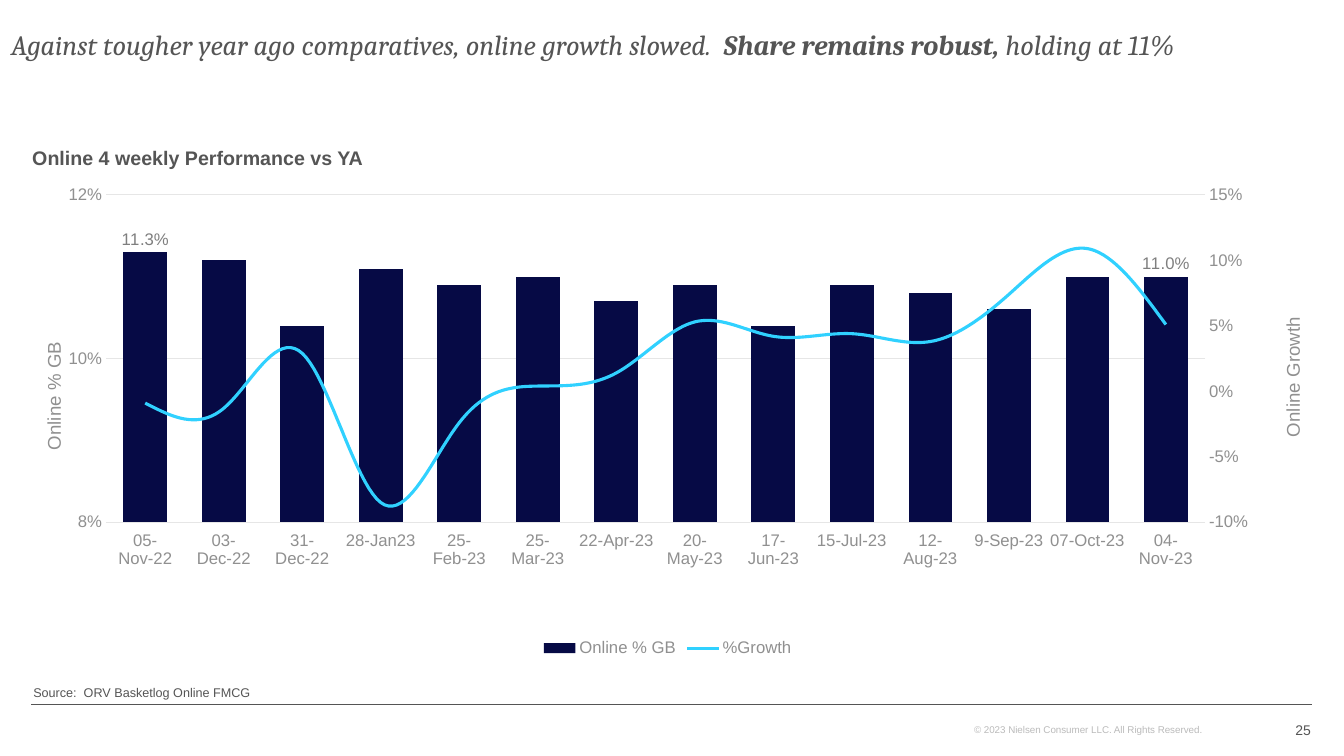
from copy import deepcopy

from lxml import etree
from pptx import Presentation
from pptx import util as u
from pptx.chart.axis import ValueAxis
from pptx.chart.data import CategoryChartData
from pptx.dml.color import RGBColor
from pptx.enum import chart as charts, shapes, text
from pptx.oxml.ns import qn

# Content
TITLE = [
    ("Against tougher year ago comparatives, online growth slowed.  ", False),
    ("Share remains robust, ", True),
    ("holding at 11%", False),
]
HEADING = "Online 4 weekly Performance vs YA"
SOURCE = "Source:  ORV Basketlog Online FMCG"
COPYRIGHT = "© 2023 Nielsen Consumer LLC. All Rights Reserved."
PAGE = "25"
SHARE_NAME, GROWTH_NAME = "Online % GB", "%Growth"
PERIODS = [  # four weeks ending, online share, growth on year ago
    ("05-Nov-22", 0.113, -0.009), ("03-Dec-22", 0.112, -0.013),
    ("31-Dec-22", 0.104, 0.029), ("28-Jan23", 0.111, -0.085),
    ("25-Feb-23", 0.109, -0.024), ("25-Mar-23", 0.110, 0.004),
    ("22-Apr-23", 0.107, 0.014), ("20-May-23", 0.109, 0.053),
    ("17-Jun-23", 0.104, 0.042), ("15-Jul-23", 0.109, 0.044),
    ("12-Aug-23", 0.108, 0.038), ("9-Sep-23", 0.106, 0.074),
    ("07-Oct-23", 0.110, 0.109), ("04-Nov-23", 0.110, 0.051),
]
SHARE_SCALE = dict(minimum_scale=0.08, maximum_scale=0.12, major_unit=0.02)
GROWTH_SCALE = dict(minimum_scale=-0.1, maximum_scale=0.15, major_unit=0.05)

THEME = {
    "body": "Arial", "display": "Cambria",
    "ink": "555555", "axis": "909090", "label": "7F7F7F", "grid": "E6E6E6",
    "faint": "BBBBBB", "bar": "060A45", "line": "30D1FF",
    "title": 20, "heading": 14, "axis_title": 13.3, "chart": 12,
    "page": 10, "source": 9, "copyright": 7,
}

# Places as percentages of the slide: left, top, width, height
SLIDE = (13.33, 7.5)
PLACES = {
    "title": (0.83, 2.93, 98.8, 5.73),
    "heading": (2.4, 18.53, 35.86, 4.53),
    "chart": (2.4, 24.53, 95.05, 62.93),
    "source": (2.48, 90, 95.05, 6.4),
    "rule": (2.33, 93.2, 95.27, 0),
    "copyright": (72.47, 95.07, 21.31, 2.93),
    "page": (90.1, 93.87, 7.43, 5.33),
}
# Shares of the chart frame
PLOT_AREA = dict(x=0.058, y=0.02, w=0.865, h=0.688)
SHARE_TITLE_AT = dict(x=0.005, y=0.32)
GROWTH_TITLE_AT = dict(x=0.98, y=0.268)


def place(name):
    return [u.Inches(share * SLIDE[i % 2] / 100)
            for i, share in enumerate(PLACES[name])]


def apply(target, **values):
    for name, value in values.items():
        setattr(target, name, value)


def style_font(font, size, color, face="body", **values):
    apply(font, name=THEME[face], size=u.Pt(THEME[size]), **values)
    font.color.rgb = RGBColor.from_string(THEME[color])


def style_line(line, color, width):
    line.color.rgb = RGBColor.from_string(THEME[color])
    line.width = u.Pt(width)


def fill_text(shape, runs, size, color, face="body", middle=True,
              align=text.PP_ALIGN.LEFT, italic=False):
    frame = shape.text_frame
    anchor = text.MSO_ANCHOR.MIDDLE if middle else text.MSO_ANCHOR.TOP
    apply(frame, word_wrap=True, vertical_anchor=anchor,
          auto_size=text.MSO_AUTO_SIZE.NONE, margin_left=0, margin_right=0,
          margin_top=u.Inches(0.05), margin_bottom=u.Inches(0.05))
    paragraph = frame.paragraphs[0]
    paragraph.alignment = align
    for words, bold in runs:
        run = paragraph.add_run()
        run.text = words
        style_font(run.font, size, color, face, bold=bold, italic=italic)


def child(parent, tag, value):
    etree.SubElement(parent, qn(tag)).set("val", str(value))


def set_layout(parent, index, box, inner=False):
    for old in parent.findall(qn("c:layout")):
        parent.remove(old)
    layout = etree.Element(qn("c:layout"))
    manual = etree.SubElement(layout, qn("c:manualLayout"))
    if inner:
        child(manual, "c:layoutTarget", "inner")
    for side in "xy":
        child(manual, f"c:{side}Mode", "edge")
    for side, share in box.items():
        child(manual, f"c:{side}", share)
    parent.insert(index, layout)


def style_value_axis(axis, scale, title, title_at):
    apply(axis, major_tick_mark=charts.XL_TICK_MARK.NONE, **scale)
    apply(axis.tick_labels, number_format="0%", number_format_is_linked=False)
    style_font(axis.tick_labels.font, "chart", "axis")
    axis.format.line.fill.background()
    frame = axis.axis_title.text_frame
    frame.text = title
    style_font(frame.paragraphs[0].runs[0].font, "axis_title", "axis", bold=False)
    title_element = axis._element.find(qn("c:title"))
    body = title_element.find(".//" + qn("a:bodyPr"))
    body.set("rot", "-5400000")
    body.set("vert", "horz")
    set_layout(title_element, 1, title_at)


def move_growth_to_right_axis(chart):
    plot_area = chart._chartSpace.chart.plotArea
    bars = plot_area.find(qn("c:barChart"))
    growth = bars.findall(qn("c:ser"))[1]
    for invert in growth.findall(qn("c:invertIfNegative")):
        growth.remove(invert)
    lines = etree.Element(qn("c:lineChart"))
    bars.addnext(lines)
    child(lines, "c:grouping", "standard")
    child(lines, "c:varyColors", 0)
    lines.append(growth)
    child(lines, "c:marker", 1)
    new_ids = {"c:catAx": "5001", "c:valAx": "5002"}
    right = {}
    last = plot_area.find(qn("c:valAx"))
    for tag, cross in (("c:catAx", "c:valAx"), ("c:valAx", "c:catAx")):
        axis = right[tag] = deepcopy(plot_area.find(qn(tag)))
        axis.find(qn("c:axId")).set("val", new_ids[tag])
        axis.find(qn("c:crossAx")).set("val", new_ids[cross])
        child(lines, "c:axId", new_ids[tag])
        last.addnext(axis)
        last = axis
    right["c:catAx"].find(qn("c:delete")).set("val", "1")
    right["c:valAx"].find(qn("c:axPos")).set("val", "r")
    right["c:valAx"].find(qn("c:crosses")).set("val", "max")
    axis = ValueAxis(right["c:valAx"])
    axis.has_major_gridlines = False
    style_value_axis(axis, GROWTH_SCALE, "Online Growth", GROWTH_TITLE_AT)
    set_layout(plot_area, 0, PLOT_AREA, inner=True)


def add_performance_chart(slide):
    names, shares, growth = zip(*PERIODS)
    data = CategoryChartData(number_format="0.0%")
    data.categories = names
    data.add_series(SHARE_NAME, shares)
    data.add_series(GROWTH_NAME, growth)
    chart = slide.shapes.add_chart(
        charts.XL_CHART_TYPE.COLUMN_CLUSTERED, *place("chart"), data).chart
    apply(chart, has_title=False, has_legend=True)
    style_font(chart.font, "chart", "axis")
    apply(chart.legend, position=charts.XL_LEGEND_POSITION.BOTTOM,
          include_in_layout=False)
    style_font(chart.legend.font, "chart", "axis")

    # Axes
    dates = chart.category_axis
    apply(dates, major_tick_mark=charts.XL_TICK_MARK.NONE,
          tick_label_position=charts.XL_TICK_LABEL_POSITION.LOW)
    style_font(dates.tick_labels.font, "chart", "axis")
    style_line(dates.format.line, "grid", 0.75)
    style_value_axis(chart.value_axis, SHARE_SCALE, SHARE_NAME, SHARE_TITLE_AT)
    style_line(chart.value_axis.major_gridlines.format.line, "grid", 0.75)
    move_growth_to_right_axis(chart)

    # Columns with the first and last one labelled
    columns, curve = chart.plots
    apply(columns, gap_width=80, vary_by_categories=False)
    series = columns.series[0]
    series.format.fill.solid()
    series.format.fill.fore_color.rgb = RGBColor.from_string(THEME["bar"])
    series.data_labels.show_value = False
    for index in (0, len(PERIODS) - 1):
        label = series.points[index].data_label
        label.position = charts.XL_LABEL_POSITION.OUTSIDE_END
        style_font(label.font, "chart", "label")
    for label in series._element.findall(".//" + qn("c:dLbl")):
        number = etree.Element(qn("c:numFmt"), formatCode="0.0%", sourceLinked="0")
        label.find(qn("c:idx")).addnext(number)

    # Growth curve
    series = curve.series[0]
    series.smooth = True
    series.marker.style = charts.XL_MARKER_STYLE.NONE
    style_line(series.format.line, "line", 2.25)


def main():
    presentation = Presentation()
    presentation.slide_width, presentation.slide_height = map(u.Inches, SLIDE)
    slide = presentation.slides.add_slide(presentation.slide_layouts[5])

    # Title
    title = slide.shapes.title
    apply(title, **dict(zip(("left", "top", "width", "height"), place("title"))))
    fill_text(title, TITLE, "title", "ink", "display", italic=True)

    # Footer rule
    left, top, width, height = place("rule")
    rule = slide.shapes.add_connector(
        shapes.MSO_CONNECTOR.STRAIGHT, left, top, left + width, top + height)
    style_line(rule.line, "ink", 1)
    etree.SubElement(rule._element.spPr, qn("a:effectLst"))

    # Chart and texts
    add_performance_chart(slide)
    for name, words, color, options in (
        ("heading", HEADING, "ink", {}),
        ("source", SOURCE, "ink", {"middle": False}),
        ("copyright", COPYRIGHT, "faint", {"middle": False}),
        ("page", PAGE, "ink", {"align": text.PP_ALIGN.RIGHT}),
    ):
        box = slide.shapes.add_textbox(*place(name))
        fill_text(box, [(words, name == "heading")], name, color, **options)

    presentation.save("out.pptx")


if __name__ == "__main__":
    main()
